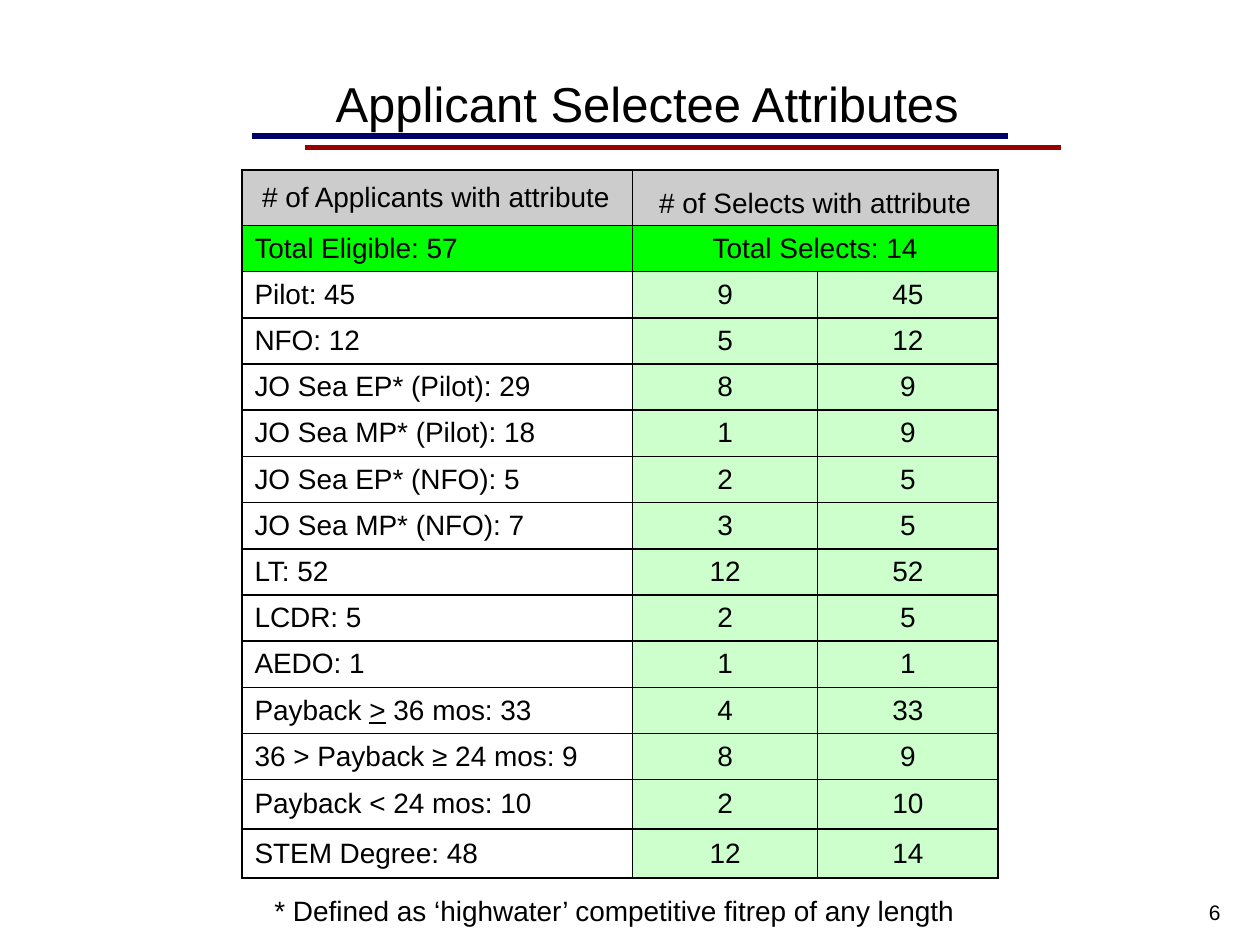
from dataclasses import dataclass
from itertools import product

from lxml.etree import SubElement
from pptx import Presentation
from pptx.dml.color import RGBColor
from pptx.enum.shapes import MSO_CONNECTOR
from pptx.enum.text import MSO_ANCHOR, PP_ALIGN
from pptx.oxml.ns import qn
from pptx.slide import Slide
from pptx.table import _Cell as Cell
from pptx.text.text import TextFrame
from pptx.util import Inches, Pt

BLACK = RGBColor(0, 0, 0)
WHITE = RGBColor(255, 255, 255)
NAVY = RGBColor(0, 0, 102)
RED = RGBColor(153, 0, 0)
GRAY = RGBColor(204, 204, 204)
LIME = RGBColor(0, 255, 0)
MINT = RGBColor(204, 255, 204)

FONT = "Arial"
WIDE, HIGH = Inches(10), Inches(7.5)
UNIT = WIDE / 100


@dataclass(frozen=True)
class Rule:
    left: float
    top: float
    width: float
    color: RGBColor


@dataclass(frozen=True)
class Label:
    text: str
    left: float
    top: float
    width: float
    height: float
    size: int
    align: PP_ALIGN = PP_ALIGN.CENTER
    anchor: MSO_ANCHOR = MSO_ANCHOR.TOP
    inset: float = 1


@dataclass(frozen=True)
class Trait:
    name: str
    picks: int
    total: int


RULES = [Rule(20, 10.8, 60, NAVY), Rule(24.2, 11.7, 60, RED)]

LABELS = [
    Label("Applicant Selectee Attributes", 4.2, 3.6, 90, 9.2, 28,
          anchor=MSO_ANCHOR.MIDDLE, inset=5.3),
    Label("* Defined as ‘highwater’ competitive fitrep of any length",
          20.8, 70.4, 56.6, 3.7, 16, PP_ALIGN.LEFT),
    Label("6", 93.2, 70.9, 6.4, 3, 12),
]

HEADS = [
    ("# of Applicants with attribute", "# of Selects with attribute", GRAY),
    ("Total Eligible: 57", "Total Selects: 14", LIME),
]

TRAITS = [
    Trait("Pilot: 45", 9, 45),
    Trait("NFO: 12", 5, 12),
    Trait("JO Sea EP* (Pilot): 29", 8, 9),
    Trait("JO Sea MP* (Pilot): 18", 1, 9),
    Trait("JO Sea EP* (NFO): 5", 2, 5),
    Trait("JO Sea MP* (NFO): 7", 3, 5),
    Trait("LT: 52", 12, 52),
    Trait("LCDR: 5", 2, 5),
    Trait("AEDO: 1", 1, 1),
    Trait("Payback > 36 mos: 33", 4, 33),
    Trait("36 > Payback ≥ 24 mos: 9", 8, 9),
    Trait("Payback < 24 mos: 10", 2, 10),
    Trait("STEM Degree: 48", 12, 14),
]
LINED = "Payback > 36"

COLS = [31, 14.7, 14.3]
TALL, HEAD, LAST = 56.2, 4.4, 3.9
BODY = (TALL - HEAD - 2 * LAST) / (len(TRAITS) - 1)
ROWS = [HEAD] + [BODY] * (len(TRAITS) - 1) + [LAST] * 2


def grid(*units: float) -> list[int]:
    return [round(unit * UNIT) for unit in units]


def style(frame: TextFrame, size: int, align: PP_ALIGN) -> None:
    for para in frame.paragraphs:
        para.alignment = align
        for run in para.runs:
            run.font.size = Pt(size)
            run.font.name = FONT
            run.font.color.rgb = BLACK


def draw_rule(slide: Slide, rule: Rule) -> None:
    ends = grid(rule.left, rule.top, rule.left + rule.width, rule.top)
    line = slide.shapes.add_connector(MSO_CONNECTOR.STRAIGHT, *ends)
    line.line.color.rgb = rule.color
    line.line.width = Pt(3)
    SubElement(line._element.spPr, qn("a:effectLst"))


def draw_label(slide: Slide, label: Label) -> None:
    place = grid(label.left, label.top, label.width, label.height)
    frame = slide.shapes.add_textbox(*place).text_frame
    frame.word_wrap = True
    frame.vertical_anchor = label.anchor
    frame.margin_left = grid(label.inset)[0]
    frame.text = label.text
    style(frame, label.size, label.align)


def add_edges(cell: Cell) -> None:
    props = cell._tc.get_or_add_tcPr()
    for side in ("lnL", "lnR", "lnT", "lnB"):
        edge = SubElement(props, qn(f"a:{side}"), w=str(Pt(1)))
        fill = SubElement(edge, qn("a:solidFill"))
        SubElement(fill, qn("a:srgbClr"), val=str(BLACK))


def fill_cell(cell: Cell, text: str, color: RGBColor, align: PP_ALIGN) -> None:
    cell.fill.solid()
    cell.fill.fore_color.rgb = color
    cell.vertical_anchor = MSO_ANCHOR.MIDDLE
    cell.text = text
    if LINED in text:
        para = cell.text_frame.paragraphs[0]
        start, end = text.split(">")
        para.text = start
        para.add_run().text = ">"
        para.add_run().text = end
        para.runs[1].font.underline = True
    style(cell.text_frame, 16, align)


def draw_table(slide: Slide) -> None:
    place = grid(19.2, 13.5, sum(COLS), TALL)
    table = slide.shapes.add_table(len(ROWS), len(COLS), *place).table
    table.first_row = table.horz_banding = False
    for col, width in zip(table.columns, grid(*COLS)):
        col.width = width
    for row, height in zip(table.rows, grid(*ROWS)):
        row.height = height
    for row, col in product(range(len(ROWS)), range(len(COLS))):
        add_edges(table.cell(row, col))
    for row, (left, right, color) in enumerate(HEADS):
        table.cell(row, 1).merge(table.cell(row, 2))
        fill_cell(table.cell(row, 0), left, color, PP_ALIGN.LEFT)
        fill_cell(table.cell(row, 1), right, color, PP_ALIGN.CENTER)
    table.cell(0, 0).margin_left = grid(1.6)[0]
    table.cell(0, 1).vertical_anchor = MSO_ANCHOR.BOTTOM
    for row, trait in enumerate(TRAITS, len(HEADS)):
        fill_cell(table.cell(row, 0), trait.name, WHITE, PP_ALIGN.LEFT)
        for col, count in enumerate((trait.picks, trait.total), 1):
            fill_cell(table.cell(row, col), str(count), MINT, PP_ALIGN.CENTER)


def main() -> None:
    deck = Presentation()
    deck.slide_width, deck.slide_height = WIDE, HIGH
    slide = deck.slides.add_slide(deck.slide_layouts[6])
    for rule in RULES:
        draw_rule(slide, rule)
    draw_table(slide)
    for label in LABELS:
        draw_label(slide, label)
    deck.save("out.pptx")


if __name__ == "__main__":
    main()
